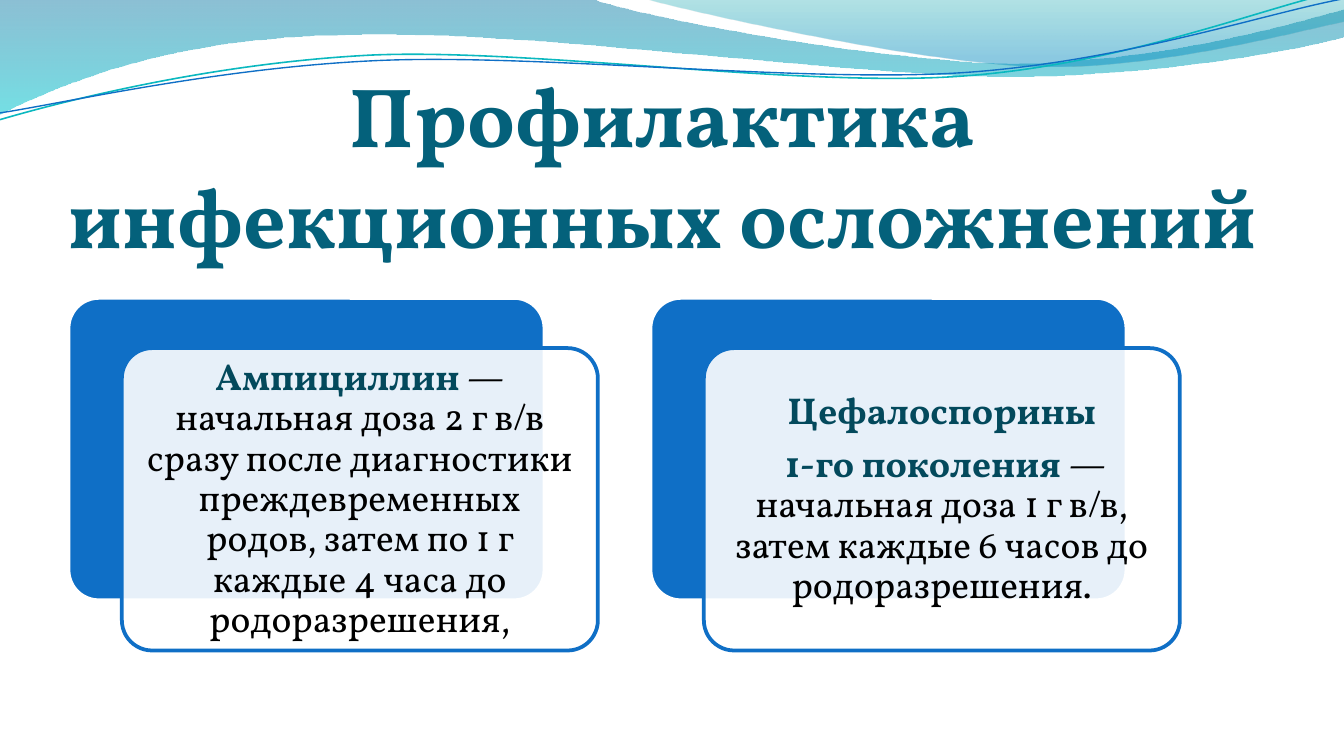
from pptx import Presentation
from pptx.dml.color import RGBColor
from pptx.enum.shapes import MSO_SHAPE as Shape
from pptx.enum.text import (MSO_ANCHOR as Anchor, MSO_AUTO_SIZE as Fit,
                            PP_ALIGN as Align)
from pptx.oxml.xmlchemy import OxmlElement as Node
from pptx.util import Pt

# Content: each card is a list of paragraphs, each a list of (text, strong)
HEAD = "Профилактика инфекционных осложнений"
CARDS = [
    [[("Ампициллин", True),
      (" — начальная доза 2 г в/в сразу после диагностики преждевременных "
       "родов, затем по 1 г каждые 4 часа до родоразрешения,", False)]],
    [[("Цефалоспорины", True)],
     [(" 1-го поколения ", True),
      ("— начальная доза 1 г в/в, затем каждые 6 часов до родоразрешения.",
       False)]],
]

THEME = {
    "font": "Vollkorn", "head_size": 45, "body_size": 20,
    "head": "04617B", "strong": "03495C", "text": "000000",
    "blue": "0F6FC6", "teal": "0AB8BF", "white": "FFFFFF",
}

# Waves: start point, then corners (2 numbers) or Bezier curves (6 numbers)
# Bands end with gradient stops: position, colour, opacity in percent
BANDS = [
    ((0, 0), [(316.8, -0.7),
              (342.7, 9.4, 478.1, 33.8, 545.8, 33.8),
              (614.2, 33.8, 689.8, 13.7, 720, 5), (720.7, 19.4),
              (707.8, 23.8, 626.4, 41, 537.1, 41),
              (447.8, 40.3, 275, 15.1, 185, 18.7),
              (92.9, 19.4, 33.1, 44.6, -0.7, 61.2)],
     [(0, "0074A1", 45), (1, "00C6CF", 55)]),
    ((344.9, -0.7), [(366.5, 5.8, 491, 33.1, 553.7, 35.3),
                     (616.3, 37.4, 691.9, 17.3, 720, 11.5), (720, 0)],
     [(0, "00A1A9", 30), (0.8, "008BBF", 45)]),
]
LINES = [
    ((0, 64.1), [(34.6, 54, 113.8, 33.8, 199.4, 29.5),
                 (285.1, 25.9, 426.2, 46.8, 512.6, 41),
                 (599.8, 35.3, 676.1, 4.3, 718.6, -5)], "teal", 0.85),
    ((0, 60.5), [(33.8, 55.4, 118.1, 36, 203.8, 32.4),
                 (290.2, 28.8, 429.8, 44.6, 516.2, 38.9),
                 (601.9, 33.1, 677.5, 7.2, 720, -0.7)], "blue", 0.75),
]

# Card grid
LEFT, TOP, WIDE, HIGH = 36.7, 159.6, 255, 162
STEP, SHIFT, PAD = 311.8, (28.6, 26.9), 4.7


def rgb(key):
    return RGBColor.from_string(THEME.get(key, key))


def fade(shape, levels):
    """Set the opacity of the fill colours in order."""
    tones = shape.element.spPr.xpath(
        "./a:solidFill/a:srgbClr | ./a:gradFill//a:srgbClr")
    for tone, level in zip(tones, levels):
        alpha = Node("a:alpha")
        alpha.set("val", str(level * 1000))
        tone.append(alpha)


def draw(slide, start, parts, close):
    """Outline all points, then join each curve's three into a Bezier."""
    pen = slide.shapes.build_freeform(*map(Pt, start))
    pts = [(Pt(x), Pt(y)) for part in parts
           for x, y in zip(part[::2], part[1::2])]
    pen.add_line_segments(pts, close=close)
    shape = pen.convert_to_shape()
    shape.shadow.inherit = False
    legs = iter(shape.element.xpath(".//a:path/a:lnTo"))
    for part in parts:
        leg = next(legs)
        if len(part) == 6:
            curve = Node("a:cubicBezTo")
            leg.addprevious(curve)
            for old in (leg, next(legs), next(legs)):
                curve.append(old[0])
                old.getparent().remove(old)
    return shape


def add_run(par, text, size, tone, bold):
    run = par.add_run()
    run.text = text
    font = run.font
    font.name, font.size, font.bold = THEME["font"], Pt(size), bold
    font.color.rgb = rgb(tone)


def set_frame(frame, anchor, pads):
    frame.word_wrap = True
    frame.auto_size = Fit.NONE
    frame.vertical_anchor = anchor
    (frame.margin_left, frame.margin_top,
     frame.margin_right, frame.margin_bottom) = map(Pt, pads)


def add_panel(slide, x, y, fill, line):
    box = slide.shapes.add_shape(
        Shape.ROUNDED_RECTANGLE, Pt(x), Pt(y), Pt(WIDE), Pt(HIGH))
    box.adjustments[0] = 0.1
    box.shadow.inherit = False
    box.fill.solid()
    box.fill.fore_color.rgb = rgb(fill)
    box.line.color.rgb = rgb(line)
    box.line.width = Pt(2)
    return box


def add_card(slide, x, pars):
    add_panel(slide, x, TOP, "blue", "white")
    left, top = x + SHIFT[0], TOP + SHIFT[1]
    fade(add_panel(slide, left, top, "white", "blue"), [90])
    box = slide.shapes.add_textbox(
        Pt(left + PAD), Pt(top + PAD),
        Pt(WIDE - 2 * PAD), Pt(HIGH - 2 * PAD))
    frame = box.text_frame
    set_frame(frame, Anchor.MIDDLE, [6] * 4)
    for i, runs in enumerate(pars):
        par = frame.add_paragraph() if i else frame.paragraphs[0]
        par.alignment = Align.CENTER
        par.line_spacing, par.space_after = 0.9, Pt(7)
        for text, strong in runs:
            add_run(par, text, THEME["body_size"],
                    "strong" if strong else "text", strong)


def main():
    deck = Presentation()
    deck.slide_width, deck.slide_height = Pt(720), Pt(405)
    slide = deck.slides.add_slide(deck.slide_layouts[5])

    # Wave bands and lines
    for start, parts, stops in BANDS:
        band = draw(slide, start, parts, True)
        band.line.fill.background()
        band.fill.gradient()
        band.fill.gradient_angle = 270
        for stop, (pos, tone, _) in zip(band.fill.gradient_stops, stops):
            stop.position, stop.color.rgb = pos, rgb(tone)
        fade(band, [level for _, _, level in stops])
    for start, parts, tone, width in LINES:
        wave = draw(slide, start, parts, False)
        wave.fill.background()
        wave.line.color.rgb = rgb(tone)
        wave.line.width = Pt(width)

    # Title, in front of the waves; its text grows up from the bottom inset
    title = slide.shapes.title
    title.left, title.top = Pt(31), Pt(128.9)
    title.width, title.height = Pt(648), Pt(67.7)
    set_frame(title.text_frame, Anchor.BOTTOM, (0, 3.6, 0, 54.4))
    par = title.text_frame.paragraphs[0]
    par.alignment = Align.CENTER
    add_run(par, HEAD, THEME["head_size"], "head", True)
    slide.shapes.element.append(title.element)

    # Cards
    for i, pars in enumerate(CARDS):
        add_card(slide, LEFT + i * STEP, pars)

    deck.save("out.pptx")


if __name__ == "__main__":
    main()
